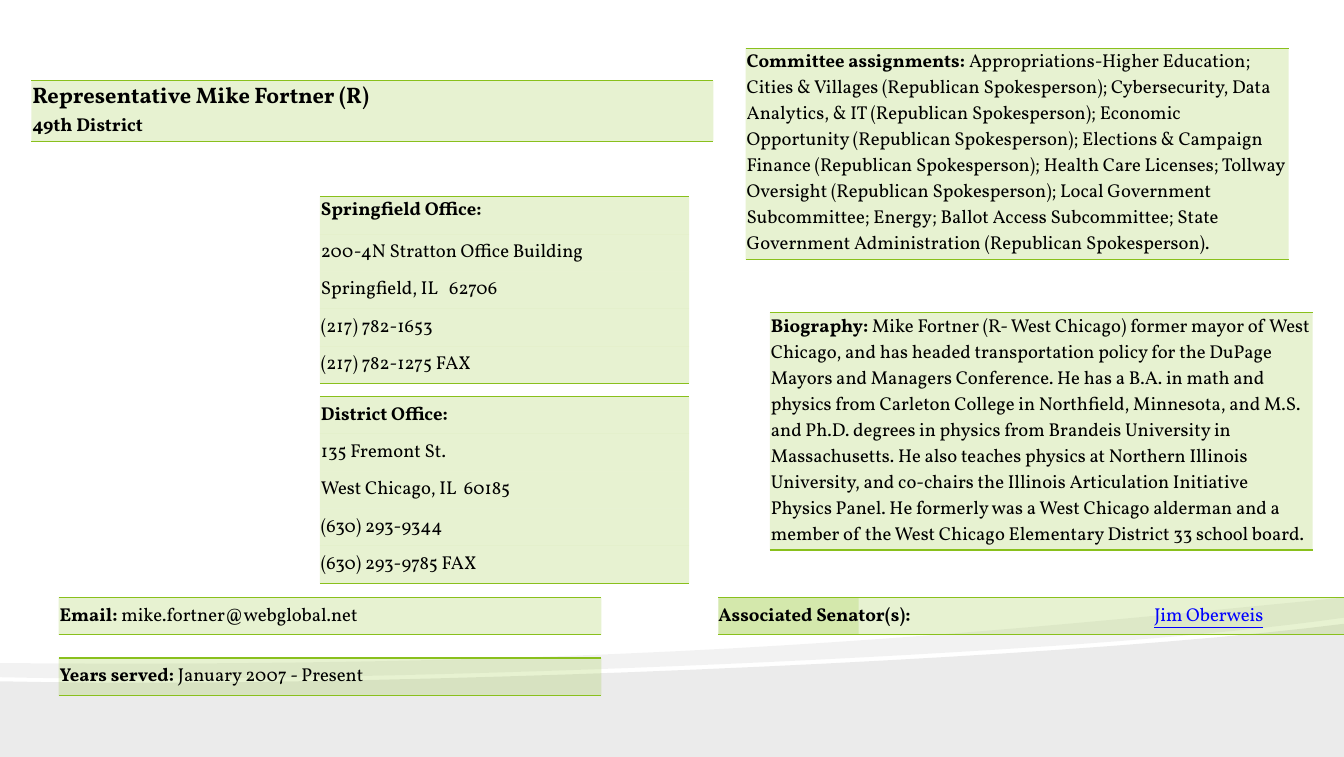
from pptx import Presentation
from pptx import util as u
from pptx.dml.color import RGBColor
from pptx.enum import text
from pptx.oxml import parse_xml
from pptx.oxml.ns import nsdecls, qn

GREEN = RGBColor(0x89, 0xC0, 0x1C)
BLACK = RGBColor(0, 0, 0)
BLUE = RGBColor(0, 0, 0xFF)
PLAIN = "{2D5ABB26-0587-4C30-8999-92F81FD0307C}"

deck = Presentation()
deck.slide_width, deck.slide_height = u.Inches(13.32), u.Inches(7.5)
slide = deck.slides.add_slide(deck.slide_layouts[6])


def curve(a, b, c, d):
    pts = []
    for i in range(25):
        t = i / 24
        s = 1 - t
        pts.append(tuple(s**3 * p + 3 * s * s * t * q + 3 * s * t * t * r + t**3 * e
                         for p, q, r, e in zip(a, b, c, d)))
    return pts


def tint(fill, color, alpha):
    fill.solid()
    fill.fore_color.rgb = color
    node = fill._xPr.find(".//" + qn("a:srgbClr"))
    node.append(parse_xml(f'<a:alpha {nsdecls("a")} val="{alpha * 1000}"/>'))


hill = [(13.32, 7.5), (0, 7.5)] + curve((0, 6.75), (3.52, 6.83), (10.42, 6.55), (13.32, 6.18))
band = (curve((13.32, 6.12), (12.55, 6.23), (11.49, 6.33), (10.29, 6.41))
        + curve((10.29, 6.41), (6.98, 6.63), (2.58, 6.77), (0, 6.71))
        + curve((0, 6.57), (6.52, 6.62), (9.71, 6.27), (13.32, 5.92)))
for pts, alpha in [(hill, 8), (band, 5)]:
    path = [(u.Inches(x), u.Inches(y)) for x, y in pts]
    pen = slide.shapes.build_freeform(*path[0])
    pen.add_line_segments(path[1:], close=True)
    wave = pen.convert_to_shape()
    wave.shadow.inherit = False
    wave.line.fill.background()
    tint(wave.fill, BLACK, alpha)

ROW = 0.37
posts = (" Appropriations-Higher Education; Cities & Villages (Republican Spokesperson); "
         "Cybersecurity, Data Analytics, & IT (Republican Spokesperson); Economic Opportunity "
         "(Republican Spokesperson); Elections & Campaign Finance (Republican Spokesperson); "
         "Health Care Licenses; Tollway Oversight (Republican Spokesperson); Local Government "
         "Subcommittee; Energy; Ballot Access Subcommittee; State Government Administration "
         "(Republican Spokesperson).")
bio = (" Mike Fortner (R- West Chicago) former mayor of West Chicago, and has headed "
       "transportation policy for the DuPage Mayors and Managers Conference. He has a B.A. in "
       "math and physics from Carleton College in Northfield, Minnesota, and M.S. and Ph.D. "
       "degrees in physics from Brandeis University in Massachusetts. He also teaches physics "
       "at Northern Illinois University, and co-chairs the Illinois Articulation Initiative "
       "Physics Panel. He formerly was a West Chicago alderman and a member of the West Chicago "
       "Elementary District 33 school board.")
state = [("Springfield Office:", ""), ("", "200-4N Stratton Office Building"),
         ("", "Springfield, IL   62706"), ("", "(217) 782-1653"), ("", "(217) 782-1275 FAX")]
local = [("District Office:", ""), ("", "135 Fremont St."), ("", "West Chicago, IL  60185"),
         ("", "(630) 293-9344"), ("", "(630) 293-9785 FAX")]

# left, top, column widths, row height, rows of (bold, regular) cells
grids = [
    (3.17, 1.95, [3.66], ROW, [[c] for c in state]),
    (0.31, 0.8, [6.76], 0.6, [[("Representative Mike Fortner (R)\n49th District", "")]]),
    (3.17, 3.93, [3.66], ROW, [[c] for c in local]),
    (0.58, 5.92, [5.38], ROW, [[("Email: ", "mike.fortner@webglobal.net")]]),
    (0.58, 6.52, [5.38], ROW, [[("Years served: ", "January 2007 - Present")]]),
    (7.39, 0.48, [5.38], 2.09, [[("Committee assignments:", posts)]]),
    (7.63, 3.1, [5.38], 2.35, [[("Biography:", bio)]]),
    (7.12, 5.92, [1.39], ROW, [[("", "")]]),
    (7.12, 5.92, [4.32, 2.4], ROW, [[("Associated Senator(s):", ""), ("", "Jim Oberweis")]]),
]
for left, top, cols, high, rows in grids:
    frame = slide.shapes.add_table(len(rows), len(cols), u.Inches(left), u.Inches(top),
                                   u.Inches(sum(cols)), u.Inches(high * len(rows)))
    table = frame.table
    table.first_row = table.horz_banding = False
    table._tbl.tblPr.find(qn("a:tableStyleId")).text = PLAIN
    for col, wide in zip(table.columns, cols):
        col.width = u.Inches(wide)
    for i, row in enumerate(rows):
        for j, (bold, plain) in enumerate(row):
            cell = table.cell(i, j)
            inset = u.Inches(0.01 if len(cols) == 1 else 0)
            cell.margin_left = cell.margin_right = inset
            cell.margin_top = cell.margin_bottom = inset
            cell.vertical_anchor = text.MSO_ANCHOR.MIDDLE
            if bold == "Springfield Office:":
                cell.vertical_anchor = text.MSO_ANCHOR.TOP
            tint(cell.fill, GREEN, 20)
            edges = [("lnB", i == len(rows) - 1), ("lnT", i == 0)]
            for tag, shown in edges:
                if shown:
                    cell._tc.tcPr.insert(0, parse_xml(
                        f'<a:{tag} {nsdecls("a")} w="12700"><a:solidFill>'
                        f'<a:srgbClr val="{GREEN}"/></a:solidFill></a:{tag}>'))
            cell.text_frame.text = bold
            if plain:
                cell.text_frame.paragraphs[-1].add_run().text = plain
            for para in cell.text_frame.paragraphs:
                for run in para.runs:
                    font = run.font
                    font.name = "Vollkorn"
                    font.size = u.Pt(16 if run.text.startswith("Representative") else 13.3)
                    font.bold = run.text != plain
                    font.color.rgb = BLACK
                    if run.text == "Jim Oberweis":
                        font.color.rgb = BLUE
                        font.underline = True

deck.save("out.pptx")
